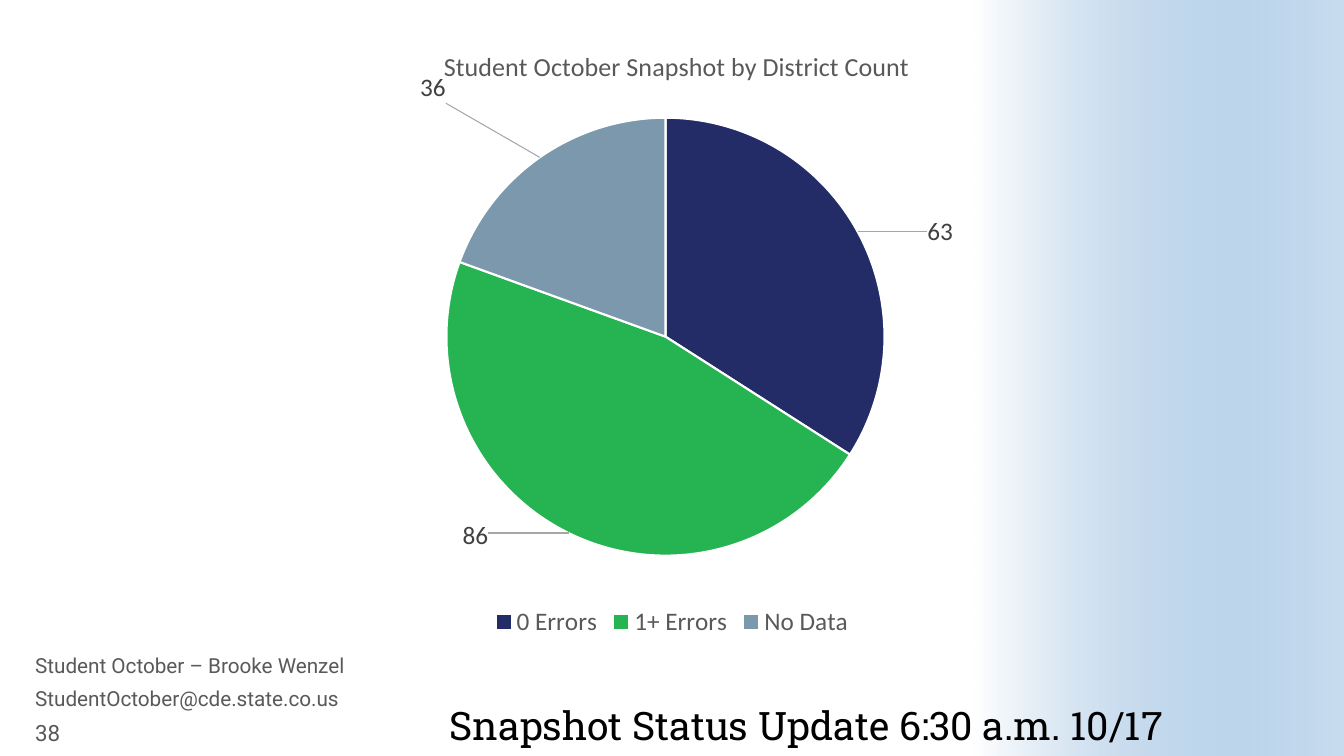
from lxml.etree import SubElement
from pptx import Presentation
from pptx.chart.data import CategoryChartData
from pptx.dml.color import RGBColor
from pptx.enum.chart import XL_CHART_TYPE, XL_LABEL_POSITION, XL_LEGEND_POSITION
from pptx.enum.shapes import MSO_SHAPE
from pptx.enum.text import MSO_ANCHOR, MSO_AUTO_SIZE, PP_ALIGN
from pptx.oxml import parse_xml
from pptx.oxml.ns import nsdecls, qn
from pptx.util import Inches, Pt

WHITE = RGBColor(0xFF, 0xFF, 0xFF)
BLACK = RGBColor(0x00, 0x00, 0x00)
GREY = RGBColor(0x59, 0x59, 0x59)
LABEL_GREY = RGBColor(0x40, 0x40, 0x40)
SKY = RGBColor(0x48, 0x8B, 0xC9)
NAVY = RGBColor(0x23, 0x2C, 0x67)
GREEN = RGBColor(0x26, 0xB3, 0x51)
STEEL = RGBColor(0x7C, 0x98, 0xAC)

SLIDE_W, SLIDE_H = 13.33, 7.5
MARGIN = 0.25
FOOTER_TOP, FOOTER_ROW = 6.47, 0.32

# Category, district count, slice colour, label shift as shares of the chart
SLICES = [
    ("0 Errors", 63, NAVY, (0.05, 0.03)),
    ("1+ Errors", 86, GREEN, (-0.06, -0.03)),
    ("No Data", 36, STEEL, (-0.07, -0.08)),
]


def box(left, top, width, height):
    return [Inches(length) for length in (left, top, width, height)]


def style_font(font, size, color, name="Calibri"):
    font.size, font.name, font.bold = Pt(size), name, False
    font.color.rgb = color


def write_text(shape, text, *, size, color, font="Roboto", align=PP_ALIGN.LEFT,
               anchor=MSO_ANCHOR.MIDDLE, spacing=1.0, inset=0.1):
    frame = shape.text_frame
    frame.word_wrap = True
    frame.auto_size = MSO_AUTO_SIZE.NONE
    frame.vertical_anchor = anchor
    frame.margin_left = frame.margin_right = Inches(inset)
    frame.margin_top = frame.margin_bottom = Inches(inset / 2)
    paragraph = frame.paragraphs[0]
    paragraph.alignment = align
    paragraph.line_spacing = spacing
    run = paragraph.add_run()
    run.text = text
    style_font(run.font, size, color, font)


def add_side_panel(slide):
    width = 3.66
    panel = slide.shapes.add_shape(
        MSO_SHAPE.RECTANGLE, *box(SLIDE_W - width, 0, width, SLIDE_H))
    panel.shadow.inherit = False
    panel.line.fill.background()
    panel.fill.gradient()
    panel.fill.gradient_angle = 0
    for stop, color, position in zip(panel.fill.gradient_stops, (WHITE, SKY), (0, 1)):
        stop.color.rgb = color
        stop.position = position
    # The blue end is 30 % opaque
    blue = panel.element.findall(".//" + qn("a:srgbClr"))[-1]
    SubElement(blue, qn("a:alpha")).set("val", "30000")
    # Send the panel behind the title
    slide.shapes.element.insert(2, panel.element)


def manual_layout(**values):
    """Chart layout; values are shares of the chart's size."""
    order = ("layoutTarget", "xMode", "yMode", "x", "y", "w", "h")
    parts = "".join(f'<c:{key} val="{values[key]}"/>' for key in order if key in values)
    return parse_xml(f'<c:layout {nsdecls("c")}><c:manualLayout>{parts}'
                     "</c:manualLayout></c:layout>")


def set_layout(parent, index, **values):
    for old in parent.findall(qn("c:layout")):
        parent.remove(old)
    parent.insert(index, manual_layout(**values))


def add_leader_lines(labels):
    for old in labels.findall(qn("c:showLeaderLines")):
        labels.remove(old)
    SubElement(labels, qn("c:showLeaderLines")).set("val", "1")
    labels.append(parse_xml(
        f'<c:leaderLines {nsdecls("c", "a")}><c:spPr><a:ln w="9525"><a:solidFill>'
        '<a:srgbClr val="A6A6A6"/></a:solidFill></a:ln></c:spPr></c:leaderLines>'))


def add_district_pie(slide):
    data = CategoryChartData()
    data.categories = [category for category, *_ in SLICES]
    data.add_series("Series 1", [count for _, count, *_ in SLICES])
    chart = slide.shapes.add_chart(
        XL_CHART_TYPE.PIE, *box(MARGIN, MARGIN, SLIDE_W - 2 * MARGIN, 6.12), data).chart
    style_font(chart.font, 10, BLACK)

    # Title and legend
    chart.has_title = True
    heading = chart.chart_title.text_frame.paragraphs[0].add_run()
    heading.text = "Student October Snapshot by District Count"
    style_font(heading.font, 18.6, GREY)
    chart.has_legend = True
    chart.legend.position = XL_LEGEND_POSITION.BOTTOM
    chart.legend.include_in_layout = False
    style_font(chart.legend.font, 18, GREY)

    # Slices and their labels
    plot = chart.plots[0]
    plot.vary_by_categories = True
    series = plot.series[0]
    labels = series.data_labels
    labels.show_value = True
    labels.position = XL_LABEL_POSITION.BEST_FIT
    style_font(labels.font, 18, LABEL_GREY)
    for index, (_, _, color, _) in enumerate(SLICES):
        point = series.points[index]
        point.format.fill.solid()
        point.format.fill.fore_color.rgb = color
        point.format.line.color.rgb = WHITE
        point.format.line.width = Pt(1.5)
        point.data_label.position = XL_LABEL_POSITION.BEST_FIT
        style_font(point.data_label.font, 18, LABEL_GREY)

    # Places inside the chart
    root = chart.element
    for label, (*_, (x, y)) in zip(root.iter(qn("c:dLbl")), SLICES):
        set_layout(label, 1, x=x, y=y)
    add_leader_lines(next(root.iter(qn("c:dLbls"))))
    set_layout(next(root.iter(qn("c:title"))), 1,
               xMode="edge", yMode="edge", x=0.32, y=0.03)
    set_layout(next(root.iter(qn("c:plotArea"))), 0, layoutTarget="inner",
               xMode="edge", yMode="edge", x=0.32, y=0.15, w=0.35, h=0.71)


def add_footer_line(slide, row, text, width, **text_format):
    line = slide.shapes.add_textbox(
        *box(MARGIN, FOOTER_TOP + row * FOOTER_ROW, width, 0.31))
    write_text(line, text, color=GREY, **text_format)


def main():
    deck = Presentation()
    deck.slide_width, deck.slide_height = Inches(SLIDE_W), Inches(SLIDE_H)
    slide = deck.slides.add_slide(deck.slide_layouts[5])

    add_side_panel(slide)

    # Title
    title = slide.shapes.title
    title.left, title.top, title.width, title.height = box(4.29, 6.45, 7.24, 0.98)
    write_text(title, "Snapshot Status Update 6:30 a.m. 10/17", size=28, color=BLACK,
               font="Roboto Slab", align=PP_ALIGN.RIGHT, anchor=MSO_ANCHOR.BOTTOM,
               spacing=0.9, inset=0)

    add_district_pie(slide)

    # Contact and page number
    add_footer_line(slide, 0, "Student October – Brooke Wenzel", 3.89, size=14.8, spacing=0.8)
    add_footer_line(slide, 1, "StudentOctober@cde.state.co.us", 3.89, size=14.8, spacing=0.8)
    add_footer_line(slide, 2, "38", 0.85, size=16)

    deck.save("out.pptx")


if __name__ == "__main__":
    main()
